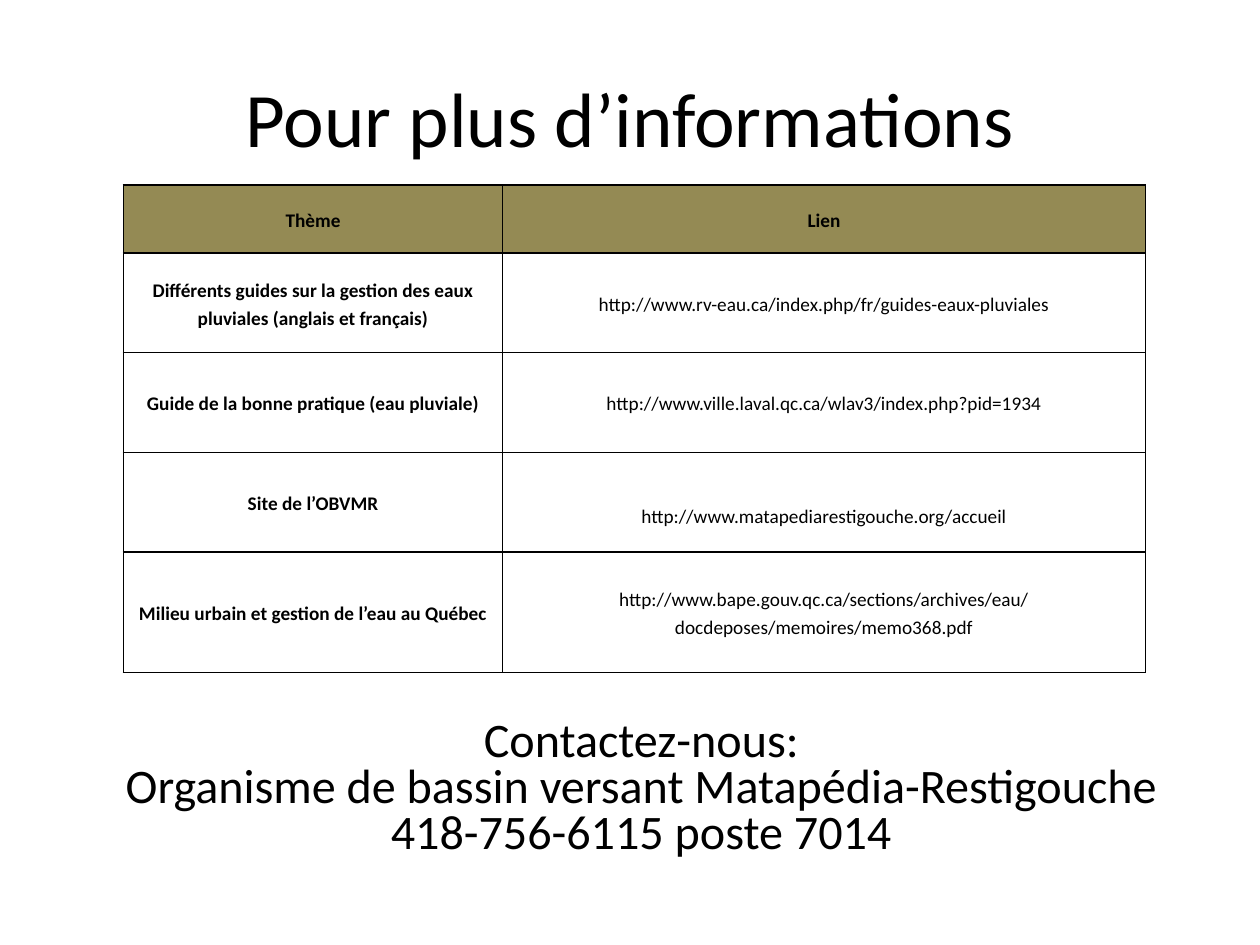
"""Builds the "Pour plus d’informations" slide with its table of links and contact details."""
from lxml.etree import SubElement
from pptx import Presentation
from pptx.dml.color import RGBColor
from pptx.enum.text import MSO_ANCHOR as Anchor, PP_ALIGN as Align
from pptx.oxml.ns import qn
from pptx.util import Inches, Pt

HEADINGS = ("Thème", "Lien")
GUIDES = [
    ("Différents guides sur la gestion des eaux pluviales (anglais et français)",
     ["http://www.rv-eau.ca/index.php/fr/guides-eaux-pluviales"]),
    ("Guide de la bonne pratique (eau pluviale)",
     ["http://www.ville.laval.qc.ca/wlav3/index.php?pid=1934"]),
    ("Site de l’OBVMR", ["http://www.matapediarestigouche.org/accueil"]),
    ("Milieu urbain et gestion de l’eau au Québec",
     ["http://www.bape.gouv.qc.ca/sections/archives/eau/",
      "docdeposes/memoires/memo368.pdf"]),
]
CONTACT = ["Contactez-nous:", "Organisme de bassin versant Matapédia-Restigouche",
           "418-756-6115 poste 7014"]


def colour(code):
    return RGBColor.from_string(code)


class Page:
    font = "Calibri"
    ink = "000000"
    header_fill = "948A54"

    def __init__(self, slide):
        self.slide = slide

    def set_lines(self, frame, lines, size, spacing, bold=False):
        frame.text = "\n".join(lines)
        frame.word_wrap = True
        for paragraph in frame.paragraphs:
            paragraph.alignment = Align.CENTER
            paragraph.line_spacing = spacing
            paragraph.font.name = self.font
            paragraph.font.size = Pt(size)
            paragraph.font.bold = bold
            paragraph.font.color.rgb = colour(self.ink)

    def text(self, left, top, width, height, lines, size, spacing=1.0):
        frame = self.slide.shapes.add_textbox(
            Inches(left), Inches(top), Inches(width), Inches(height)).text_frame
        self.set_lines(frame, lines, size, spacing)
        frame.vertical_anchor = Anchor.MIDDLE

    def border(self, cell):
        properties = cell._tc.get_or_add_tcPr()
        for side in ("a:lnL", "a:lnR", "a:lnT", "a:lnB"):
            line = SubElement(properties, qn(side), w=str(Pt(1)))
            fill = SubElement(line, qn("a:solidFill"))
            SubElement(fill, qn("a:srgbClr"), val=self.ink)

    def cell(self, cell, lines, bold, fill=None):
        self.set_lines(cell.text_frame, lines, 11, 1.15, bold)
        cell.vertical_anchor = Anchor.MIDDLE
        cell.margin_left = cell.margin_right = Inches(0.07)
        cell.margin_top = cell.margin_bottom = 0
        self.border(cell)
        if fill:
            cell.fill.solid()
            cell.fill.fore_color.rgb = colour(fill)
        else:
            cell.fill.background()

    def table(self, left, top, widths, heights):
        table = self.slide.shapes.add_table(
            len(heights), len(widths), Inches(left), Inches(top),
            Inches(sum(widths)), Inches(sum(heights))).table
        table.first_row = table.horz_banding = False
        for column, width in zip(table.columns, widths):
            column.width = Inches(width)
        for row, height in zip(table.rows, heights):
            row.height = Inches(height)
        return table


def main():
    deck = Presentation()
    deck.slide_width, deck.slide_height = Inches(10), Inches(7.5)
    page = Page(deck.slides.add_slide(deck.slide_layouts[6]))

    page.text(0.5, 0.3, 9, 1.25, ["Pour plus d’informations"], 44)

    links = page.table(0.98, 1.47, [3.01, 5.1], [0.54, 0.79, 0.79, 0.79, 0.96])
    for column, heading in enumerate(HEADINGS):
        page.cell(links.cell(0, column), [heading], True, page.header_fill)
    for row, (theme, address) in enumerate(GUIDES, start=1):
        page.cell(links.cell(row, 0), [theme], True)
        page.cell(links.cell(row, 1), address, False)
    links.cell(3, 1).margin_top = Inches(0.21)

    page.text(0.59, 5.64, 9, 1.25, CONTACT, 27.5, 0.8)
    deck.save("out.pptx")


if __name__ == "__main__":
    main()
